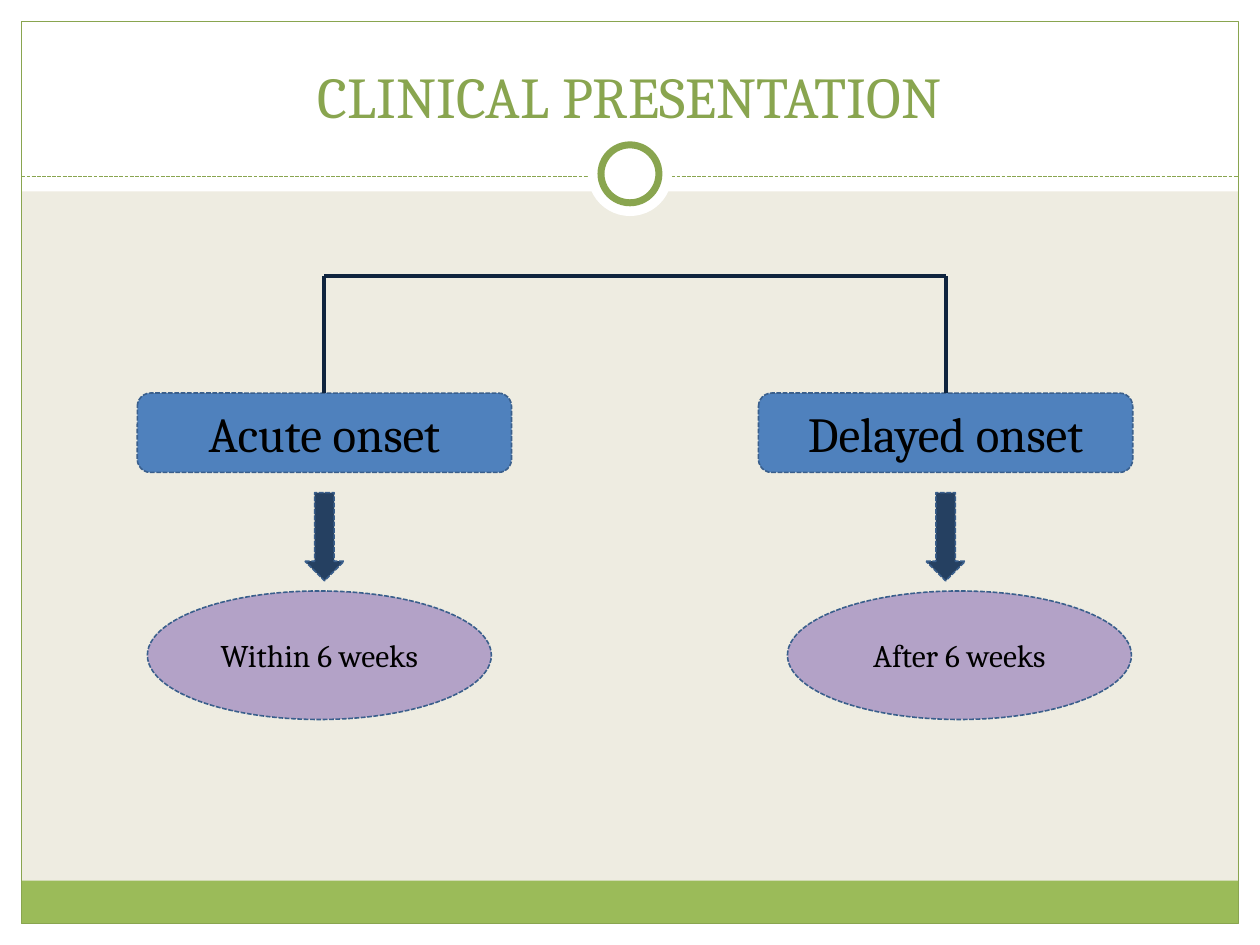
from pptx import Presentation
from pptx.dml.color import RGBColor
from pptx.enum.dml import MSO_LINE
from pptx.enum.shapes import MSO_CONNECTOR, MSO_SHAPE
from pptx.enum.text import MSO_ANCHOR, PP_ALIGN
from pptx.oxml.ns import qn
from pptx.util import Inches, Pt
from lxml import etree

RECT, ROUNDED, OVAL, DOWN_ARROW = (MSO_SHAPE.RECTANGLE, MSO_SHAPE.ROUNDED_RECTANGLE,
                                   MSO_SHAPE.OVAL, MSO_SHAPE.DOWN_ARROW)
STRAIGHT = MSO_CONNECTOR.STRAIGHT
DASH = MSO_LINE.SQUARE_DOT  # written as sysDot; replaced by SYS_DASH below
SYS_DASH = "sysDash"
CENTER = PP_ALIGN.CENTER
MIDDLE, BOTTOM = MSO_ANCHOR.MIDDLE, MSO_ANCHOR.BOTTOM
TITLE_ONLY = 5
TOP_SITE = 0
FONT = "Cambria"
COLORS = {
    "background": "EEECE1", "white": "FFFFFF", "band": "9BBB59", "green": "89A54F",
    "onset": "4F81BD", "outline": "3A5F8C", "bracket": "0F243E",
    "timing": "B3A2C7", "arrow": "254061", "text": "000000",
}


def rgb(name):
    return RGBColor.from_string(COLORS[name])


def style_line(line, color, width, dashed=False):
    line.color.rgb = rgb(color)
    line.width = Pt(width)
    if dashed:
        line.dash_style = DASH
        line._ln.find(qn("a:prstDash")).set("val", SYS_DASH)


def style_text(frame, text, size, color, anchor):
    frame.text = text
    frame.word_wrap = True
    frame.vertical_anchor = anchor
    paragraph = frame.paragraphs[0]
    paragraph.alignment = CENTER
    paragraph.font.name = FONT
    paragraph.font.size = Pt(size)
    paragraph.font.color.rgb = rgb(color)


def add_block(slide, kind, box, fill=None, line=None, width=0.9, dashed=False):
    block = slide.shapes.add_shape(kind, *map(Inches, box))
    block.shadow.inherit = False
    if fill:
        block.fill.solid()
        block.fill.fore_color.rgb = rgb(fill)
    else:
        block.fill.background()
    if line:
        style_line(block.line, line, width, dashed)
    else:
        block.line.fill.background()
    return block


def add_line(slide, start, end, color, width, dashed=False):
    line = slide.shapes.add_connector(STRAIGHT, *map(Inches, (*start, *end)))
    style_line(line.line, color, width, dashed)
    etree.SubElement(line._element.spPr, qn("a:effectLst"))
    return line


def add_frame(slide, width, height):
    """White margins, green band, border and the ringed divider."""
    margin, header = 0.17, 1.52
    right, bottom = width - margin, height - margin
    for box in ((0, bottom, width, margin), (0, 0, width, header),
                (0, 0, margin, height), (right, 0, margin, height)):
        add_block(slide, RECT, box, "white")
    add_block(slide, RECT, (margin, 6.99, width - 2 * margin, 0.34), "band")
    add_block(slide, RECT, (margin, margin, width - 2 * margin, height - 2 * margin),
              line="green", width=0.75)
    add_line(slide, (margin, 1.4), (right, 1.4), "green", 0.75, dashed=True)
    for size, outline in ((0.67, None), (0.46, "green")):
        add_block(slide, OVAL, ((width - size) / 2, 1.38 - size / 2, size, size),
                  "white", outline, 4)


def add_title(slide, box, text):
    title = slide.shapes.title
    title.left, title.top, title.width, title.height = map(Inches, box)
    style_text(title.text_frame, text, 33, "green", BOTTOM)
    slide.shapes._spTree.append(title._element)  # in front of the white header


def add_branch(slide, box, onset, timing, timing_offset):
    """Onset box, arrow and timing oval; returns the onset box."""
    left, top, width, height = box
    onset_box = add_block(slide, ROUNDED, box, "onset", "outline", dashed=True)
    style_text(onset_box.text_frame, onset, 28, "text", MIDDLE)
    timing_oval = add_block(slide, OVAL, (left + timing_offset, top + 1.57, 2.73, 1.02),
                            "timing", "outline", dashed=True)
    style_text(timing_oval.text_frame, timing, 18, "text", MIDDLE)
    arrow_width = 0.31
    add_block(slide, DOWN_ARROW,
              (left + (width - arrow_width) / 2, top + 0.79, arrow_width, 0.7),
              "arrow", "outline", dashed=True)
    return onset_box


def add_onset_chart(slide, box):
    """Two branches under a common bracket."""
    left, top, width, bracket_height = box
    branch_width, branch_top = 2.97, top + bracket_height
    branches = (("Acute onset", "Within 6 weeks", left, 0.08),
                ("Delayed onset", "After 6 weeks", left + width - branch_width, 0.23))
    middles = []
    for onset, timing, branch_left, timing_offset in branches:
        onset_box = add_branch(slide, (branch_left, branch_top, branch_width, 0.63),
                               onset, timing, timing_offset)
        middle = branch_left + branch_width / 2
        stem = add_line(slide, (middle, branch_top), (middle, top), "bracket", 2.25)
        stem.begin_connect(onset_box, TOP_SITE)
        middles.append(middle)
    add_line(slide, (middles[0], top), (middles[1], top), "bracket", 2.25)


def main():
    width, height = 10, 7.5
    presentation = Presentation()
    presentation.slide_width, presentation.slide_height = Inches(width), Inches(height)
    slide = presentation.slides.add_slide(presentation.slide_layouts[TITLE_ONLY])
    slide.background.fill.solid()
    slide.background.fill.fore_color.rgb = rgb("background")
    add_frame(slide, width, height)
    add_title(slide, (0.33, 0.25, 9.33, 0.83), "CLINICAL PRESENTATION")
    add_onset_chart(slide, (1.09, 2.19, 7.9, 0.93))
    presentation.save("out.pptx")


if __name__ == "__main__":
    main()
